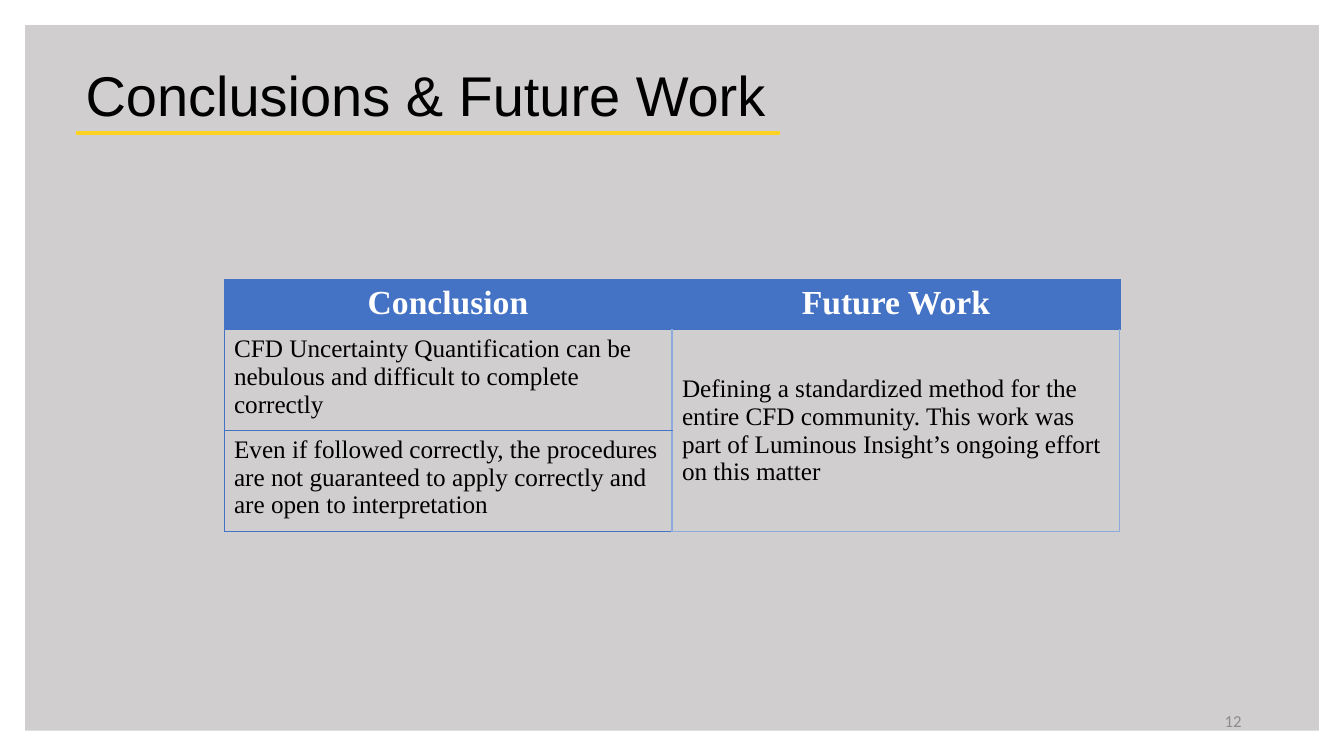
from lxml import etree
from pptx import Presentation
from pptx.dml.color import RGBColor
from pptx.enum.shapes import MSO_CONNECTOR, MSO_SHAPE
from pptx.enum.text import MSO_ANCHOR, PP_ALIGN
from pptx.oxml.ns import qn
from pptx.util import Pt

RECT = MSO_SHAPE.RECTANGLE
STRAIGHT = MSO_CONNECTOR.STRAIGHT
TOP, MIDDLE = MSO_ANCHOR.TOP, MSO_ANCHOR.MIDDLE
LEFT, CENTER, RIGHT = PP_ALIGN.LEFT, PP_ALIGN.CENTER, PP_ALIGN.RIGHT

COLORS = {
    "panel": "D0CECE",
    "black": "000000",
    "white": "FFFFFF",
    "yellow": "FED223",
    "gray": "8C8C8C",
    "blue": "4472C4",
    "light_blue": "8FAADC",
}

TITLE = {"name": "Arial", "size": Pt(40)}
NUMBER = {"name": "Calibri", "size": Pt(12)}
HEADER = {"name": "Times New Roman", "size": Pt(24), "bold": True}
BODY = {"name": "Times New Roman", "size": Pt(18), "bold": False}

HEADINGS = ["Conclusion", "Future Work"]
CONCLUSIONS = [
    "CFD Uncertainty Quantification can be nebulous and difficult to complete correctly",
    "Even if followed correctly, the procedures are not guaranteed to apply correctly "
    "and are open to interpretation",
]
FUTURE_WORK = (
    "Defining a standardized method for the entire CFD community. This work was part of "
    "Luminous Insight’s ongoing effort on this matter"
)
COLUMN_WIDTH = 320
ROW_HEIGHTS = [33.5, 67.25, 67.25]

OUTER = ("blue", 0.5)
INNER = ("light_blue", 1)
HEADER_EDGES = {"lnL": OUTER, "lnR": OUTER, "lnT": OUTER, "lnB": OUTER}
CONCLUSION_EDGES = {**HEADER_EDGES, "lnR": INNER}
FUTURE_EDGES = {"lnL": INNER, "lnR": INNER, "lnT": OUTER, "lnB": INNER}


def rgb(color):
    return RGBColor.from_string(COLORS[color])


def write_text(tf, text, font, color, align=LEFT, spacing=None):
    p = tf.paragraphs[0]
    p.alignment = align
    p.line_spacing = spacing
    r = p.add_run()
    r.text = text
    for name, value in font.items():
        setattr(r.font, name, value)
    r.font.color.rgb = rgb(color)


def add_panel(slide, x, y, w, h, color):
    sp = slide.shapes.add_shape(RECT, Pt(x), Pt(y), Pt(w), Pt(h))
    sp.shadow.inherit = False
    sp.fill.solid()
    sp.fill.fore_color.rgb = rgb(color)
    sp.line.fill.background()


def add_text(slide, x, y, w, h, text, font, color, align=LEFT, spacing=None):
    tf = slide.shapes.add_textbox(Pt(x), Pt(y), Pt(w), Pt(h)).text_frame
    tf.word_wrap = True
    tf.vertical_anchor = MIDDLE
    write_text(tf, text, font, color, align, spacing)


def add_rule(slide, x1, x2, y, color, width):
    line = slide.shapes.add_connector(STRAIGHT, Pt(x1), Pt(y), Pt(x2), Pt(y))
    line.line.color.rgb = rgb(color)
    line.line.width = Pt(width)
    etree.SubElement(line._element.spPr, qn("a:effectLst"))


def set_borders(cell, edges):
    tcPr = cell._tc.get_or_add_tcPr()
    for edge, (color, width) in edges.items():
        ln = etree.SubElement(tcPr, qn(f"a:{edge}"), w=str(Pt(width)))
        fill = etree.SubElement(ln, qn("a:solidFill"))
        etree.SubElement(fill, qn("a:srgbClr"), val=COLORS[color])


def format_cell(cell, edges, fill=None):
    set_borders(cell, edges)
    if fill:
        cell.fill.solid()
        cell.fill.fore_color.rgb = rgb(fill)
    else:
        cell.fill.background()


def add_summary_table(slide, x, y):
    rows, cols = len(ROW_HEIGHTS), len(HEADINGS)
    frame = slide.shapes.add_table(
        rows, cols, Pt(x), Pt(y), Pt(COLUMN_WIDTH * cols), Pt(sum(ROW_HEIGHTS))
    )
    table = frame.table
    table.horz_banding = False
    for row, height in zip(table.rows, ROW_HEIGHTS):
        row.height = Pt(height)
    for col, heading in enumerate(HEADINGS):
        table.columns[col].width = Pt(COLUMN_WIDTH)
        cell = table.cell(0, col)
        format_cell(cell, HEADER_EDGES, "blue")
        write_text(cell.text_frame, heading, HEADER, "white", CENTER)
    for row, conclusion in enumerate(CONCLUSIONS, start=1):
        cell = table.cell(row, 0)
        cell.vertical_anchor = TOP
        format_cell(cell, CONCLUSION_EDGES)
        write_text(cell.text_frame, conclusion, BODY, "black")
        format_cell(table.cell(row, 1), FUTURE_EDGES)
    future = table.cell(1, 1)
    future.merge(table.cell(rows - 1, 1))
    future.vertical_anchor = MIDDLE
    write_text(future.text_frame, FUTURE_WORK, BODY, "black")


def main():
    prs = Presentation()
    prs.slide_width, prs.slide_height = Pt(960), Pt(540)
    slide = prs.slides.add_slide(prs.slide_layouts[6])
    add_panel(slide, 18, 18, 924, 504, "panel")
    add_text(slide, 54, 18, 852, 104.4, "Conclusions & Future Work", TITLE, "black", spacing=0.9)
    add_rule(slide, 54, 557.3, 95, "yellow", 3.25)
    add_text(slide, 678, 500.5, 216, 28.75, "12", NUMBER, "gray", RIGHT)
    add_summary_table(slide, 160, 199.5)
    prs.save("out.pptx")


if __name__ == "__main__":
    main()
